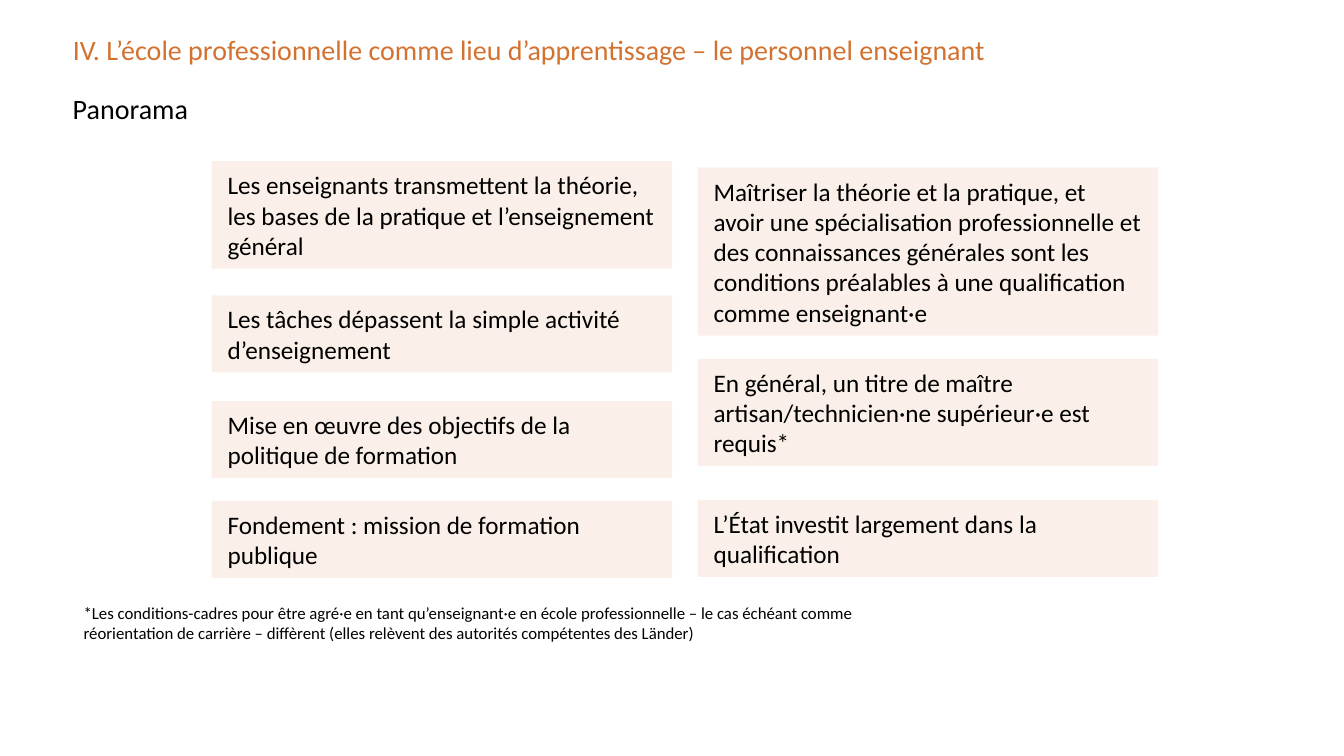
from lxml.etree import SubElement
from pptx import Presentation
from pptx.dml.color import RGBColor
from pptx.enum.shapes import MSO_SHAPE
from pptx.enum.text import MSO_ANCHOR, PP_ALIGN
from pptx.oxml.ns import qn
from pptx.util import Pt

ORANGE, BLACK = "D37230", "000000"
CARD_WIDTH = 329
LEFT = [
    (115.2, 3, "Les enseignants transmettent la théorie, les bases de la pratique "
               "et l’enseignement général"),
    (211, 2, "Les tâches dépassent la simple activité d’enseignement"),
    (286.6, 2, "Mise en œuvre des objectifs de la politique de formation"),
    (357.8, 2, "Fondement : mission de formation publique"),
]
RIGHT = [
    (119.5, 5, "Maîtriser la théorie et la pratique, et avoir une spécialisation "
               "professionnelle et des connaissances générales sont les conditions "
               "préalables à une qualification comme enseignant·e"),
    (256.3, 3, "En général, un titre de maître artisan/technicien·ne supérieur·e "
               "est requis*"),
    (357.1, 2, "L’État investit largement dans la qualification"),
]
NOTE = ("*Les conditions-cadres pour être agré·e en tant qu’enseignant·e en école "
        "professionnelle – le cas échéant comme réorientation de carrière – diffèrent "
        "(elles relèvent des autorités compétentes des Länder)")


def color(code):
    return RGBColor.from_string(code)


def write(shape, text, size, tint, inset, anchor):
    """Fill a shape with one left-aligned paragraph; inset is (side, top)."""
    frame = shape.text_frame
    frame.word_wrap = True
    frame.vertical_anchor = anchor
    frame.margin_left = frame.margin_right = Pt(inset[0])
    frame.margin_top = frame.margin_bottom = Pt(inset[1])
    line = frame.paragraphs[0]
    line.text = text
    line.alignment = PP_ALIGN.LEFT
    line.font.name = "Calibri"
    line.font.size = Pt(size)
    line.font.color.rgb = color(tint)


def label(slide, box, text, size, tint=BLACK, inset=(0, 0)):
    shape = slide.shapes.add_textbox(*map(Pt, box))
    write(shape, text, size, tint, inset, MSO_ANCHOR.TOP)


def card(slide, left, top, lines, text):
    """Draw a pale box whose height follows its number of text lines."""
    box = (left, top, CARD_WIDTH, 11.5 + 21.75 * lines)
    shape = slide.shapes.add_shape(MSO_SHAPE.RECTANGLE, *map(Pt, box))
    shape.shadow.inherit = False
    shape.line.fill.background()
    shape.fill.solid()
    shape.fill.fore_color.rgb = color(ORANGE)
    tone = next(shape.element.spPr.iter(qn("a:srgbClr")))
    SubElement(tone, qn("a:alpha"), val="10000")
    write(shape, text, 18, BLACK, (11.4, 5.7), MSO_ANCHOR.MIDDLE)


def column(slide, left, cards):
    for top, lines, text in cards:
        card(slide, left, top, lines, text)


def main():
    deck = Presentation()
    deck.slide_width, deck.slide_height = Pt(960), Pt(540)
    slide = deck.slides.add_slide(deck.slide_layouts[6])
    label(slide, (52, 23, 730, 35),
          "IV. L’école professionnelle comme lieu d’apprentissage – le personnel enseignant",
          20, ORANGE)
    label(slide, (52, 65, 870, 35), "Panorama", 20)
    column(slide, 151.2, LEFT)
    column(slide, 498.4, RIGHT)
    label(slide, (52.6, 427, 619, 36), NOTE, 12, inset=(7.2, 3.6))
    deck.save("out.pptx")


if __name__ == "__main__":
    main()
